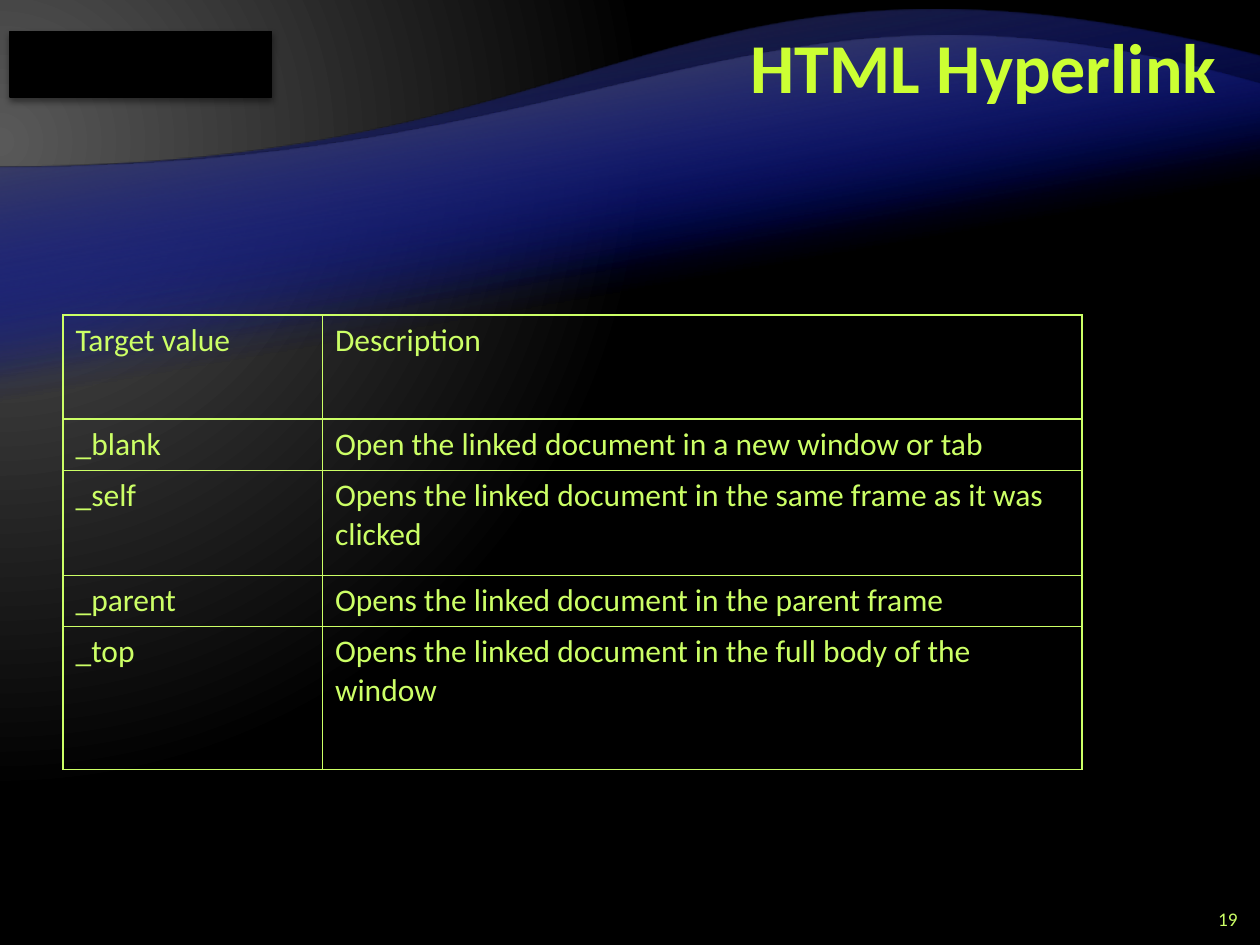
"""Build the HTML Hyperlink slide with its table of target values."""
from dataclasses import dataclass
from typing import Any

from lxml.etree import SubElement
from pptx import Presentation
from pptx.dml.color import RGBColor as Rgb
from pptx.enum.shapes import MSO_SHAPE as Preset
from pptx.enum.text import MSO_ANCHOR as Anchor, PP_ALIGN as Align
from pptx.oxml import parse_xml
from pptx.oxml.ns import nsdecls, qn
from pptx.util import Cm, Pt

COLORS = {"title": "CCFF33", "text": "CCFF66", "blue": "000D9E", "dark": "262626",
          "grey": "595959", "black": "000000"}
FONT = "Calibri"
WIDTH, HEIGHT = 25.4, 19.05
COLUMNS = (5.23, 15.31)
ROWS = (
    (2.1, "Target value", "Description"),
    (1.03, "_blank", "Open the linked document in a new window or tab"),
    (2.12, "_self", "Opens the linked document in the same frame as it was clicked"),
    (1.03, "_parent", "Opens the linked document in the parent frame"),
    (2.88, "_top", "Opens the linked document in the full body of the window"),
)


@dataclass
class Wave:
    """A band whose top edge is one curve, in centimetres."""
    bottom: float
    left: float
    right: float
    bend: tuple[float, float]
    color: str


@dataclass
class Label:
    """A right-aligned line of text in a box, in centimetres."""
    text: str
    box: tuple[float, float, float, float]
    size: int
    color: str
    bold: bool = False
    spacing: int | None = None


@dataclass
class Stop:
    """A gradient stop in percent."""
    position: int
    color: str
    alpha: int = 100


WAVES = (
    Wave(16.59, 3.38, 1.14, (13.56, -1.9), "dark"),
    Wave(14.15, 3.38, 1.7, (15.19, -1.24), "grey"),
)
LABELS = (
    Label("HTML Hyperlink", (5.08, 0.2, 19.69, 2.54), 40, "title", True, 40),
    Label("19", (23.93, 18.21, 1.27, 0.64), 11, "text"),
)


def set_gradient(owner: Any, fill: Any, stops: list[Stop], direction: str) -> None:
    """Give the owner a gradient fill."""
    fill.solid()
    marks = "".join(
        f'<a:gs pos="{stop.position * 1000}"><a:srgbClr val="{COLORS[stop.color]}">'
        f'<a:alpha val="{stop.alpha * 1000}"/></a:srgbClr></a:gs>' for stop in stops)
    solid = owner.find(".//" + qn("a:solidFill"))
    solid.getparent().replace(solid, parse_xml(
        f'<a:gradFill {nsdecls("a")} rotWithShape="1"><a:gsLst>{marks}</a:gsLst>{direction}</a:gradFill>'))


def style_text(para: Any, size: int, color: str, bold: bool = False) -> None:
    """Format the text of a paragraph."""
    for name, value in {"name": FONT, "size": Pt(size), "bold": bold}.items():
        setattr(para.font, name, value)
    para.font.color.rgb = Rgb.from_string(COLORS[color])


def draw_wave(page: Any, wave: Wave) -> None:
    """Draw a wave as an outline turned upside down."""
    def turned(x: float, y: float) -> tuple[int, int]:
        return Cm(WIDTH - x), Cm(wave.bottom - y)

    end = turned(WIDTH, wave.right)
    builder = page.shapes.build_freeform(*turned(WIDTH, wave.bottom))
    builder.add_line_segments([turned(0, wave.bottom), turned(0, wave.left), end])
    shape = builder.convert_to_shape(0, Cm(wave.right))
    edge = shape._element.findall(".//" + qn("a:lnTo"))[2]
    curve = parse_xml(f'<a:cubicBezTo {nsdecls("a")}/>')
    for x, y in (turned(WIDTH / 2, wave.left), turned(*wave.bend), end):
        SubElement(curve, qn("a:pt"), x=str(x), y=str(y))
    edge.getparent().replace(edge, curve)
    shape.rotation = 180
    shape.shadow.inherit = False
    shape.line.fill.background()
    set_gradient(shape._element, shape.fill, [Stop(65, "blue", 0), Stop(100, wave.color)],
                 '<a:lin ang="4800000" scaled="0"/>')


def draw_label(page: Any, label: Label) -> None:
    """Draw a right-aligned label."""
    frame = page.shapes.add_textbox(*map(Cm, label.box)).text_frame
    para = frame.paragraphs[0]
    frame.word_wrap, frame.vertical_anchor = True, Anchor.MIDDLE
    para.text, para.alignment = label.text, Align.RIGHT
    if label.spacing:
        para.line_spacing = Pt(label.spacing)
    style_text(para, label.size, label.color, label.bold)


def draw_cell(cell: Any, text: str) -> None:
    """Fill in one bordered table cell."""
    cell.text = text
    style_text(cell.text_frame.paragraphs[0], 18, "text")
    for side in "LRTB":
        border = SubElement(cell._tc.get_or_add_tcPr(), qn(f"a:ln{side}"), w=str(Pt(1)))
        SubElement(SubElement(border, qn("a:solidFill")), qn("a:srgbClr"), val=COLORS["text"])
    cell.fill.background()


def draw_table(page: Any) -> None:
    """Draw the table of target values."""
    table = page.shapes.add_table(len(ROWS), len(COLUMNS), Cm(1.27), Cm(6.35), Cm(sum(COLUMNS)),
                                  Cm(sum(row[0] for row in ROWS))).table
    table.first_row = table.horz_banding = False
    for column, width in zip(table.columns, COLUMNS):
        column.width = Cm(width)
    for row, (height, *texts) in zip(table.rows, ROWS):
        row.height = Cm(height)
        for cell, text in zip(row.cells, texts):
            draw_cell(cell, text)


def draw_plate(page: Any) -> None:
    """Draw the black plate with its soft shadow."""
    plate = page.shapes.add_shape(Preset.RECTANGLE, Cm(0.2), Cm(0.64), Cm(5.28), Cm(1.32))
    plate.fill.solid()
    plate.fill.fore_color.rgb = plate.line.color.rgb = Rgb.from_string(COLORS["black"])
    plate.line.width = Pt(0.75)
    plate.shadow.inherit = False
    effects = plate._element.spPr.find(qn("a:effectLst"))
    shadow = SubElement(effects, qn("a:outerShdw"), blurRad=str(Pt(4)), dist=str(Pt(2)),
                        dir="5400000", rotWithShape="0")
    color = SubElement(shadow, qn("a:srgbClr"), val=COLORS["black"])
    SubElement(color, qn("a:alpha"), val="43000")


def main() -> None:
    """Build and save the deck."""
    deck = Presentation()
    deck.slide_width, deck.slide_height = Cm(WIDTH), Cm(HEIGHT)
    page = deck.slides.add_slide(deck.slide_layouts[6])
    set_gradient(page._element, page.background.fill, [Stop(0, "grey"), Stop(83, "black")],
                 '<a:path path="circle"><a:fillToRect l="20000" t="30000" r="135000" b="100000"/></a:path>')
    for wave in WAVES * 2:
        draw_wave(page, wave)
    title, number = LABELS
    draw_label(page, title)
    draw_table(page)
    draw_label(page, number)
    draw_plate(page)
    deck.save("out.pptx")


if __name__ == "__main__":
    main()
